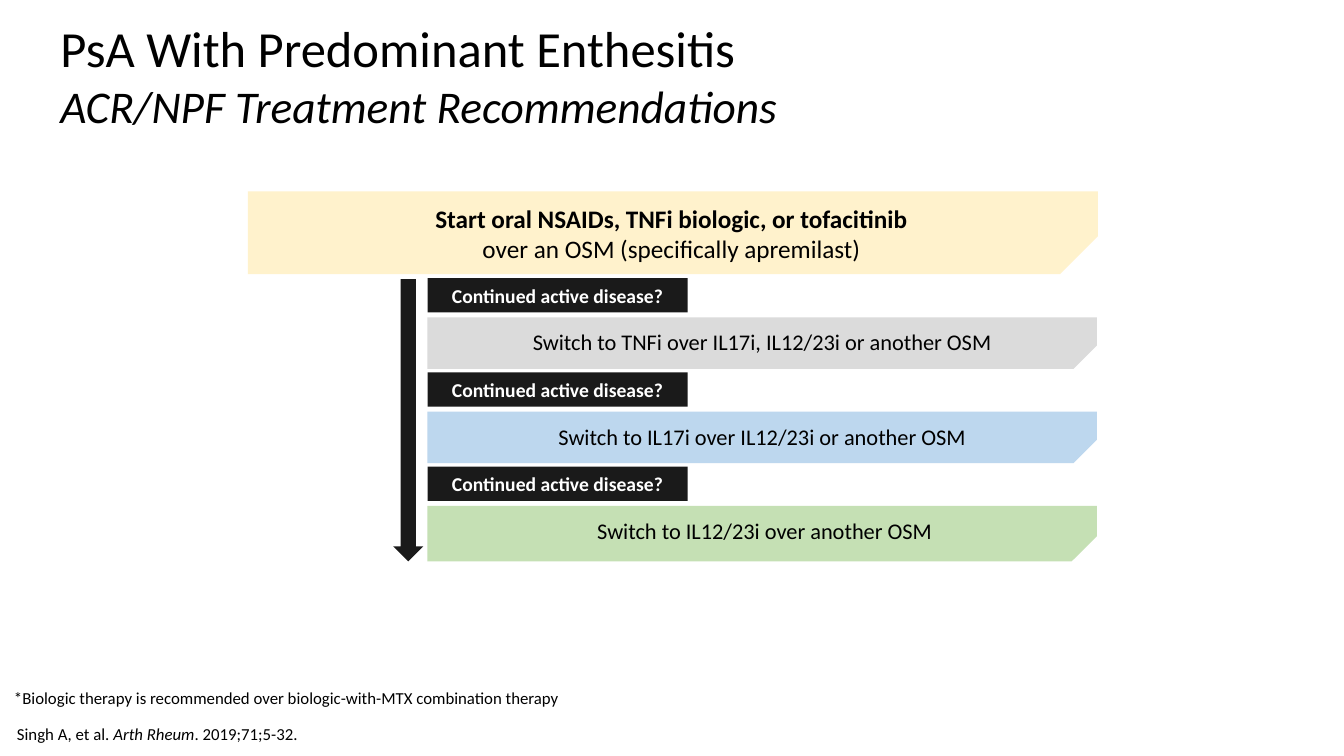
import pptx
import pptx.util
import pptx.dml.color
import pptx.enum.shapes
import pptx.enum.text

Inches, Pt = pptx.util.Inches, pptx.util.Pt
RGB = pptx.dml.color.RGBColor
SHAPE = pptx.enum.shapes.MSO_SHAPE
ALIGN = pptx.enum.text.PP_ALIGN
ANCHOR = pptx.enum.text.MSO_ANCHOR

BLACK, WHITE = RGB(0, 0, 0), RGB(255, 255, 255)
CHARCOAL = RGB(0x1A, 0x1A, 0x1A)
CREAM = RGB(0xFF, 0xF2, 0xCC)
GREY = RGB(0xDB, 0xDB, 0xDB)
BLUE = RGB(0xBD, 0xD7, 0xEE)
GREEN = RGB(0xC5, 0xE0, 0xB4)

# Each paragraph is a list of (text, run format) pairs.
TITLE = [
    [("PsA With Predominant Enthesitis", {"size": 36.1})],
    [("ACR/NPF Treatment Recommendations", {"size": 32.4, "italic": True})],
]
START = [
    [("Start oral NSAIDs, TNFi biologic, or tofacitinib", {"bold": True})],
    [("over an OSM (specifically apremilast)", {})],
]
QUESTION = [[("Continued active disease?", {"bold": True})]]
STEPS = [  # text, fill, bar height
    ("Switch to TNFi over IL17i, IL12/23i or another OSM", GREY, 0.51),
    ("Switch to IL17i over IL12/23i or another OSM", BLUE, 0.51),
    (" Switch to IL12/23i over another OSM", GREEN, 0.55),
]
NOTE = [[("*Biologic therapy is recommended over biologic-with-MTX combination therapy", {})]]
SOURCE = [[("Singh A, et al. ", {}), ("Arth Rheum", {"italic": True}), (". 2019;71;5-32.", {})]]

STEP_LEFT, STEP_WIDTH = 4.24, 6.64
STEP_TOP, STEP_PITCH = 2.76, 0.935
BAR_OFFSET = 0.39

prs = pptx.Presentation()
prs.slide_width, prs.slide_height = Inches(13.33), Inches(7.5)
slide = prs.slides.add_slide(prs.slide_layouts[5])


def write(s, paragraphs, size=12, color=BLACK, align=ALIGN.LEFT, anchor=ANCHOR.TOP):
    tf = s.text_frame
    tf.word_wrap = True
    tf.auto_size = pptx.enum.text.MSO_AUTO_SIZE.NONE
    tf.vertical_anchor = anchor
    for i, runs in enumerate(paragraphs):
        p = tf.paragraphs[0] if i == 0 else tf.add_paragraph()
        p.alignment = align
        for text, style in runs:
            r = p.add_run()
            r.text = text
            r.font.name = "Calibri"
            r.font.size = Pt(style.get("size", size))
            r.font.bold = style.get("bold", False)
            r.font.italic = style.get("italic", False)
            r.font.color.rgb = color


def add_text(box, paragraphs, **style):
    write(slide.shapes.add_textbox(*map(Inches, box)), paragraphs, **style)


def add_block(kind, box, fill):
    s = slide.shapes.add_shape(kind, *map(Inches, box))
    s.shadow.inherit = False
    s.fill.solid()
    s.fill.fore_color.rgb = fill
    s.line.fill.background()
    return s


def add_snipped_bar(box, fill):
    """Bar with its lower right corner cut off."""
    s = add_block(SHAPE.SNIP_1_RECTANGLE, box, fill)
    s.adjustments[0] = 0.458
    s._element.spPr.xfrm.set("flipV", "1")


title = slide.shapes.title
title.left, title.top, title.width, title.height = map(Inches, (0.5, 0.2, 10.69, 1.08))
write(title, TITLE, anchor=ANCHOR.MIDDLE)

add_snipped_bar((2.46, 1.9, 8.43, 0.82), CREAM)
add_text((3.61, 1.97, 6.1, 0.71), START, size=18, align=ALIGN.CENTER)

for i, (text, fill, height) in enumerate(STEPS):
    top = STEP_TOP + i * STEP_PITCH
    bar_top = top + BAR_OFFSET
    question = add_block(SHAPE.RECTANGLE, (STEP_LEFT, top, 2.58, 0.34), CHARCOAL)
    write(question, QUESTION, size=14, color=WHITE, align=ALIGN.CENTER, anchor=ANCHOR.MIDDLE)
    add_snipped_bar((STEP_LEFT, bar_top, STEP_WIDTH, height), fill)
    add_text((STEP_LEFT, bar_top + 0.06, STEP_WIDTH, 0.37), [[(text, {})]],
             size=16, align=ALIGN.CENTER)

add_block(SHAPE.DOWN_ARROW, (3.9, 2.77, 0.3, 2.8), CHARCOAL)

add_text((0.04, 6.77, 9.81, 0.3), NOTE, anchor=ANCHOR.BOTTOM)
add_text((0.07, 7.13, 6.63, 0.3), SOURCE, anchor=ANCHOR.BOTTOM)

prs.save("out.pptx")
